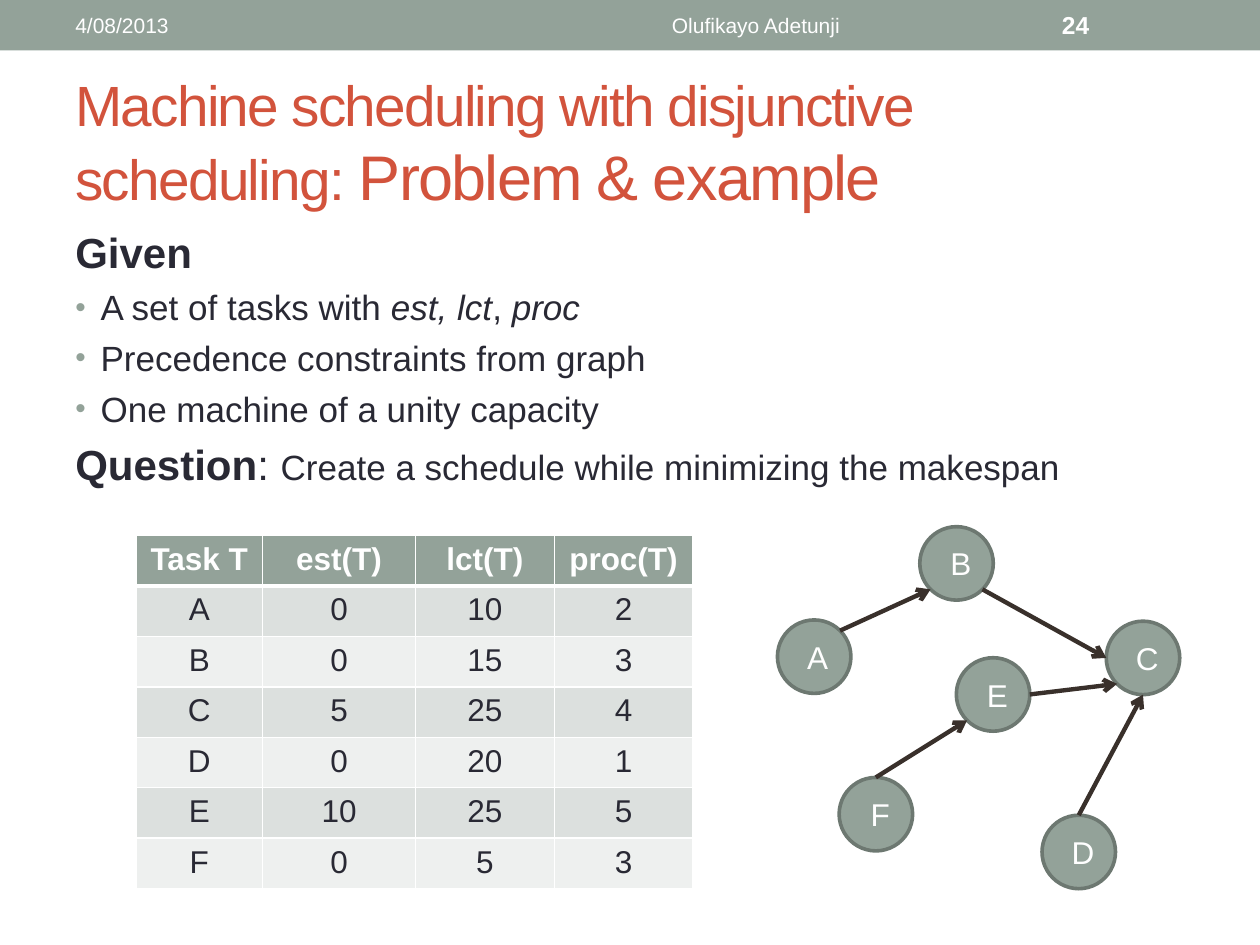
import math

import pptx
import pptx.dml.color
import pptx.enum.shapes
import pptx.enum.text
import pptx.oxml
import pptx.oxml.ns
import pptx.util

COLS, ROWS = 100, 75
SAGE, RUST, INK, WHITE = "93A299", "D2533C", "292934", "FFFFFF"
RIM, ARROW, BANDS = "6D7871", "39302B", ("EEF0EF", "DCE0DE")
ALIGN = pptx.enum.text.PP_ALIGN
NS = pptx.oxml.ns.nsdecls("a")

TASKS = [
    ("Task T", "est(T)", "lct(T)", "proc(T)"),
    ("A", 0, 10, 2),
    ("B", 0, 15, 3),
    ("C", 5, 25, 4),
    ("D", 0, 20, 1),
    ("E", 10, 25, 5),
    ("F", 0, 5, 3),
]
NODES = {"B": (11.3, 0), "D": (21, 22.9), "C": (26.1, 7.5),
         "F": (4.9, 19.9), "E": (14.2, 10.4), "A": (0, 7.4)}
EDGES = [("A", -45, "B", 135), ("B", 45, "C", 180), ("F", -90, "E", 135),
         ("E", 0, "C", 135), ("D", -90, "C", 90)]


def grid(n):
    """Turn grid units into a slide length."""
    return pptx.util.Inches(n * 10 / COLS)


def rgb(code):
    """Turn a hex string into a colour."""
    return pptx.dml.color.RGBColor.from_string(code)


def xml(parent, markup):
    """Append a DrawingML element to a parent."""
    parent.append(pptx.oxml.parse_xml(markup))


def add_text(p, text, size=20, color=INK, bold=False, italic=False, spacing=0):
    """Add a formatted run to a paragraph."""
    r = p.add_run()
    r.text = text
    r.font.name, r.font.size = "Arial", pptx.util.Pt(size)
    r.font.bold, r.font.italic = bold, italic
    r.font.color.rgb = rgb(color)
    if spacing:
        r.font._element.set("spc", str(spacing * 100))


def add_box(s, box, middle=True):
    """Add a wrapping text box and return its frame."""
    tf = s.shapes.add_textbox(*map(grid, box)).text_frame
    tf.word_wrap = True
    if middle:
        tf.vertical_anchor = pptx.enum.text.MSO_ANCHOR.MIDDLE
    return tf


def add_solid(s, kind, box, fill):
    """Add a filled preset shape without shadow."""
    sp = s.shapes.add_shape(kind, *map(grid, box))
    sp.shadow.inherit = False
    sp.fill.solid()
    sp.fill.fore_color.rgb = rgb(fill)
    sp.line.fill.background()
    return sp


def add_header(s, box):
    """Draw the top band with date, author and page number."""
    x, y, w, h = box
    add_solid(s, pptx.enum.shapes.MSO_SHAPE.RECTANGLE, box, SAGE)
    parts = [("4/08/2013", 0.05, 0.32, ALIGN.LEFT, 12, False),
             ("Olufikayo Adetunji", 0.375, 0.45, ALIGN.CENTER, 12, False),
             ("24", 0.833, 0.12, ALIGN.LEFT, 14, True)]
    for text, left, share, align, size, bold in parts:
        p = add_box(s, (x + left * w, y + 0.05 * h, share * w, 0.9 * h)).paragraphs[0]
        p.alignment = align
        add_text(p, text, size=size, color=WHITE, bold=bold)


def add_title(s, box):
    """Write the two-size title."""
    p = add_box(s, box).paragraphs[0]
    add_text(p, "Machine scheduling with disjunctive scheduling: ",
             size=32.4, color=RUST, spacing=-1)
    add_text(p, "Problem & example", size=36, color=RUST, spacing=-1)


def add_bullet(p):
    """Give a paragraph a hanging sage bullet."""
    pPr = p._p.get_or_add_pPr()
    pPr.set("marL", str(grid(2)))
    pPr.set("indent", str(-grid(2)))
    xml(pPr, f'<a:buClr {NS}><a:srgbClr val="{SAGE}"/></a:buClr>')
    xml(pPr, f'<a:buSzPct {NS} val="85000"/>')
    xml(pPr, f'<a:buFont {NS} typeface="Arial"/>')
    xml(pPr, f'<a:buChar {NS} char="•"/>')


def add_body(s, box):
    """Write the givens and the question."""
    head, slant = {"size": 24, "bold": True}, {"italic": True}
    paragraphs = [
        (False, [("Given", head)]),
        (True, [("A set of tasks with ", {}), ("est, lct", slant), (", ", {}), ("proc", slant)]),
        (True, [("Precedence constraints from graph", {})]),
        (True, [("One machine of a unity capacity", {})]),
        (False, [("Question", head), (": ", {"size": 24}),
                 ("Create a schedule while minimizing the makespan", {})]),
    ]
    tf = add_box(s, box, middle=False)
    for i, (bulleted, runs) in enumerate(paragraphs):
        p = tf.add_paragraph() if i else tf.paragraphs[0]
        p.space_before = pptx.util.Pt(5)
        if bulleted:
            add_bullet(p)
        for text, style in runs:
            add_text(p, text, **style)


def add_tasks(s, box):
    """Draw the task table with banded rows and white rules."""
    table = s.shapes.add_table(len(TASKS), len(TASKS[0]), *map(grid, box)).table
    for column, share in zip(table.columns, (0.227, 0.275, 0.249, 0.249)):
        column.width = grid(share * box[2])
    for i, values in enumerate(TASKS):
        table.rows[i].height = grid(box[3] / len(TASKS))
        for j, value in enumerate(values):
            cell = table.cell(i, j)
            tcPr = cell._tc.get_or_add_tcPr()
            for side in "LRTB":
                heavy = (i, side) in ((0, "B"), (1, "T"))
                xml(tcPr, f'<a:ln{side} {NS} w="{pptx.util.Pt(3 if heavy else 1)}"><a:solidFill>'
                          f'<a:srgbClr val="{WHITE}"/></a:solidFill></a:ln{side}>')
            cell.fill.solid()
            cell.fill.fore_color.rgb = rgb(BANDS[i % 2] if i else SAGE)
            p = cell.text_frame.paragraphs[0]
            p.alignment = ALIGN.CENTER
            add_text(p, str(value), size=18, color=INK if i else WHITE, bold=i == 0)


def add_node(s, name, box):
    """Draw one labelled task circle."""
    sp = add_solid(s, pptx.enum.shapes.MSO_SHAPE.FLOWCHART_CONNECTOR, box, SAGE)
    sp.line.color.rgb = rgb(RIM)
    sp.line.width = pptx.util.Pt(2.08)
    tf = sp.text_frame
    tf.margin_left = tf.margin_right = tf.margin_top = tf.margin_bottom = 0
    tf.vertical_anchor = pptx.enum.text.MSO_ANCHOR.MIDDLE
    tf.paragraphs[0].alignment = ALIGN.CENTER
    add_text(tf.paragraphs[0], f" {name}", size=18, color=WHITE)


def add_edge(s, start, end):
    """Draw an arrow between two grid points."""
    line = s.shapes.add_connector(pptx.enum.shapes.MSO_CONNECTOR.STRAIGHT,
                                  *map(grid, start + end))
    line.line.color.rgb = rgb(ARROW)
    line.line.width = pptx.util.Pt(2.5)
    xml(line.line._get_or_add_ln(), f'<a:tailEnd {NS} type="arrow"/>')
    xml(line._element.spPr, f"<a:effectLst {NS}/>")


def add_graph(s, box, size=5.83):
    """Draw the precedence graph from its nodes and edges."""
    x, y = box[:2]

    def rim(name, degrees):
        """Find the point on a node's rim at an angle."""
        left, top = NODES[name]
        angle, radius = math.radians(degrees), size / 2
        return (x + left + radius * (1 + math.cos(angle)),
                y + top + radius * (1 + math.sin(angle)))

    for name, (left, top) in NODES.items():
        add_node(s, name, (x + left, y + top, size, size))
    for tail, out, head, into in EDGES:
        add_edge(s, rim(tail, out), rim(head, into))


def main():
    """Build the slide and save it."""
    prs = pptx.Presentation()
    prs.slide_width, prs.slide_height = grid(COLS), grid(ROWS)
    s = prs.slides.add_slide(prs.slide_layouts[6])
    add_header(s, (0, 0, COLS, 4))
    add_title(s, (5, 5.8, 90, 10.8))
    add_body(s, (5, 17.5, 90, 23.3))
    add_tasks(s, (10.8, 42.5, 44.2, 26.6))
    add_graph(s, (61.7, 41.8, 32, 28.8))
    prs.save("out.pptx")


if __name__ == "__main__":
    main()
